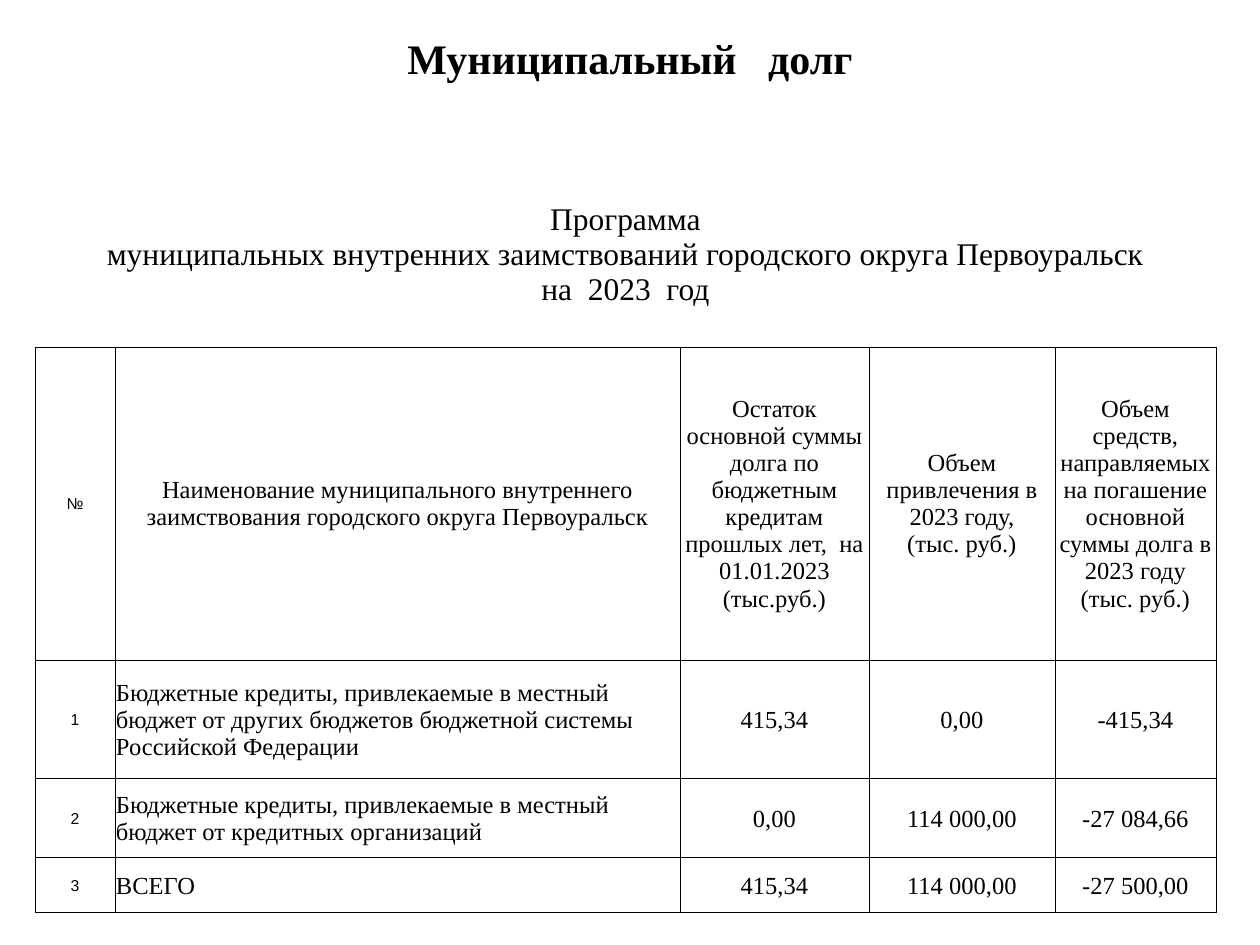
from lxml import etree
from pptx import Presentation
from pptx.dml.color import RGBColor
from pptx.enum.text import MSO_ANCHOR as Anchor, MSO_AUTO_SIZE as AutoSize, PP_ALIGN as Align
from pptx.oxml.ns import qn
from pptx.util import Pt

SCALE = 914400 / 126
BLACK = RGBColor(0x00, 0x00, 0x00)
WHITE = RGBColor(0xFF, 0xFF, 0xFF)
SERIF, SANS = "Times New Roman", "Arial"
ALL_SIDES = "LRTB"

COLUMNS = [80, 565, 189, 186, 161]
ROWS = [132, 40, 313, 119, 79, 55]
CAPTION = ("Программа\nмуниципальных внутренних заимствований "
           "городского округа Первоуральск\nна  2023  год")
BODY = [
    ["№",
     "Наименование муниципального внутреннего заимствования городского округа Первоуральск",
     "Остаток основной суммы долга по бюджетным кредитам прошлых лет,  на 01.01.2023\n(тыс.руб.)",
     "Объем привлечения в 2023 году,\n(тыс. руб.)",
     "Объем средств, направляемых на погашение основной суммы долга в 2023 году\n(тыс. руб.)"],
    ["1",
     "Бюджетные кредиты, привлекаемые в местный бюджет от других бюджетов "
     "бюджетной системы Российской Федерации",
     "415,34", "0,00", "-415,34"],
    ["2",
     "Бюджетные кредиты, привлекаемые в местный бюджет от кредитных организаций",
     "0,00", "114 000,00", "-27 084,66"],
    ["3", "ВСЕГО", "415,34", "114 000,00", "-27 500,00"],
]


def px(length):
    return round(length * SCALE)


class PageBuilder:
    def __init__(self, page):
        self.page = page

    def add_text(self, frame, text, align=Align.CENTER, **style):
        """Fill a text frame, one paragraph per line."""
        format_values = {"name": SERIF, "size": Pt(14), "bold": False, **style}
        for index, line in enumerate(text.split("\n")):
            para = frame.add_paragraph() if index else frame.paragraphs[0]
            para.alignment = align
            span = para.add_run()
            span.text = line
            span.font.color.rgb = BLACK
            for name, value in format_values.items():
                setattr(span.font, name, value)

    def title(self, text, left, top, width, height):
        box = self.page.shapes.add_textbox(*map(px, (left, top, width, height)))
        box.text_frame.word_wrap = True
        box.text_frame.auto_size = AutoSize.SHAPE_TO_FIT_TEXT
        self.add_text(box.text_frame, text, size=Pt(24), bold=True)

    def table(self, left, top, columns, rows):
        sizes = (left, top, sum(columns), sum(rows))
        table = self.page.shapes.add_table(len(rows), len(columns), *map(px, sizes)).table
        table.first_row = table.horz_banding = False
        for column, width in zip(table.columns, columns):
            column.width = px(width)
        for row, height in zip(table.rows, rows):
            row.height = px(height)
        return table

    def cell(self, cell, text="", sides="", anchor=Anchor.MIDDLE, **style):
        margins = {"margin_left": px(1), "margin_right": px(1),
                   "margin_top": px(1), "margin_bottom": 0}
        for name, value in {**margins, "vertical_anchor": anchor}.items():
            setattr(cell, name, value)
        self.borders(cell, sides)
        cell.fill.solid()
        cell.fill.fore_color.rgb = WHITE
        if text:
            self.add_text(cell.text_frame, text, **style)

    def borders(self, cell, sides):
        properties = cell._tc.get_or_add_tcPr()
        for side in ALL_SIDES:
            line = etree.SubElement(properties, qn(f"a:ln{side}"), w=str(Pt(0.5)))
            if side in sides:
                fill = etree.SubElement(line, qn("a:solidFill"))
                etree.SubElement(fill, qn("a:srgbClr"), val=str(BLACK))
            else:
                etree.SubElement(line, qn("a:noFill"))


def main():
    deck = Presentation()
    deck.slide_width, deck.slide_height = px(1260), px(945)
    builder = PageBuilder(deck.slides.add_slide(deck.slide_layouts[6]))

    builder.title("Муниципальный   долг", 0, 26, 1260, 63)
    table = builder.table(35, 175, COLUMNS, ROWS)

    # Caption across the first row, then a spacer row
    table.cell(0, 0).merge(table.cell(0, len(COLUMNS) - 1))
    for column in range(len(COLUMNS)):
        builder.cell(table.cell(0, column), "" if column else CAPTION,
                     anchor=Anchor.BOTTOM, size=Pt(18))
        builder.cell(table.cell(1, column), sides="B")

    # Column headings and loan rows
    for row, texts in enumerate(BODY, start=2):
        for column, text in enumerate(texts):
            style = {"name": SANS, "size": Pt(9)} if column == 0 else {}
            if column == 1 and row > 2:
                style["align"] = Align.LEFT
            builder.cell(table.cell(row, column), text, ALL_SIDES, **style)

    deck.save("out.pptx")


if __name__ == "__main__":
    main()
